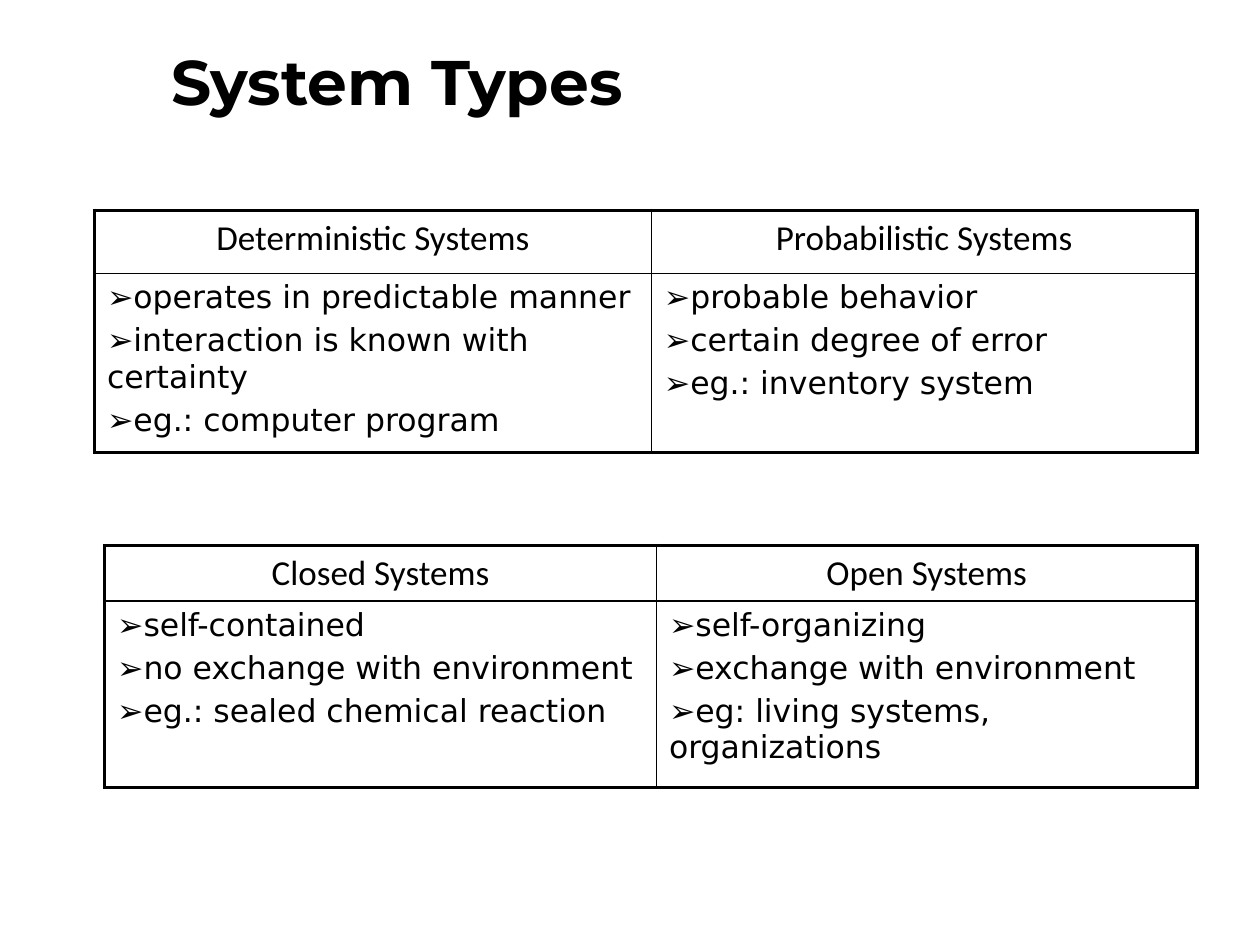
from lxml.etree import SubElement
from pptx import Presentation
from pptx.dml.color import RGBColor
from pptx.enum.text import MSO_ANCHOR, MSO_AUTO_SIZE, PP_ALIGN
from pptx.oxml import parse_xml
from pptx.oxml.ns import nsdecls, qn
from pptx.util import Inches, Pt

COLORS = {"text": "000000", "border": "000000"}
BODY_FONT = "DejaVu Sans"
OUTER, INNER = 2.25, 1
SYSTEMS = [
    {
        "pos": (0.75, 1.67), "cols": (4.42, 4.33), "rows": (0.5, 1.42),
        "content": {
            "Deterministic Systems": [
                "operates in predictable manner",
                "interaction is known with certainty",
                "eg.: computer program",
            ],
            "Probabilistic Systems": [
                "probable behavior",
                "certain degree of error",
                "eg.: inventory system",
            ],
        },
    },
    {
        "pos": (0.83, 4.33), "cols": (4.38, 4.29), "rows": (0.43, 1.48),
        "content": {
            "Closed Systems": [
                "self-contained",
                "no exchange with environment",
                "eg.: sealed chemical reaction",
            ],
            "Open Systems": [
                "self-organizing",
                "exchange with environment",
                "eg: living systems, organizations",
            ],
        },
    },
]


def format_paragraph(p, font, size, bold=False):
    for r in p.runs:
        r.font.name = font
        r.font.size = Pt(size)
        r.font.bold = bold
        r.font.color.rgb = RGBColor.from_string(COLORS["text"])


def add_title(s, text):
    sp = s.shapes.title
    sp.left, sp.top = Inches(0.84), Inches(0.29)
    sp.width, sp.height = Inches(4.62), Inches(0.71)
    tf = sp.text_frame
    tf.text = text
    tf.word_wrap = False
    tf.auto_size = MSO_AUTO_SIZE.NONE
    tf.vertical_anchor = MSO_ANCHOR.TOP
    p = tf.paragraphs[0]
    p.alignment = PP_ALIGN.CENTER
    format_paragraph(p, "Montserrat", 36, bold=True)


def set_borders(cell, row, col):
    widths = {
        "L": INNER if col else OUTER,
        "R": OUTER if col else INNER,
        "T": INNER if row else OUTER,
        "B": OUTER if row else INNER,
    }
    tc_pr = cell._tc.get_or_add_tcPr()
    for i, (side, width) in enumerate(widths.items()):
        tc_pr.insert(i, parse_xml(
            f'<a:ln{side} {nsdecls("a")} w="{Pt(width)}"><a:solidFill>'
            f'<a:srgbClr val="{COLORS["border"]}"/></a:solidFill></a:ln{side}>'
        ))


def add_bullet(p):
    p_pr = p._p.get_or_add_pPr()
    p_pr.set("marL", "0")
    p_pr.set("indent", "0")
    SubElement(p_pr, qn("a:buFont"), typeface=BODY_FONT)
    SubElement(p_pr, qn("a:buChar"), char="➢")


def fill_header(cell, text):
    cell.text = text
    p = cell.text_frame.paragraphs[0]
    p.alignment = PP_ALIGN.CENTER
    format_paragraph(p, "Calibri", 20)


def fill_bullets(cell, items):
    cell.text = "\n".join(items)
    for i, p in enumerate(cell.text_frame.paragraphs):
        add_bullet(p)
        if i:
            p.space_before = Pt(3.6)
        format_paragraph(p, BODY_FONT, 18)


def add_comparison(s, pos, cols, rows, content):
    table = s.shapes.add_table(
        len(rows), len(cols), Inches(pos[0]), Inches(pos[1]),
        Inches(sum(cols)), Inches(sum(rows)),
    ).table
    table.first_row = table.horz_banding = False
    for row, height in zip(table.rows, rows):
        row.height = Inches(height)
    for c, (header, items) in enumerate(content.items()):
        table.columns[c].width = Inches(cols[c])
        fill_header(table.cell(0, c), header)
        fill_bullets(table.cell(1, c), items)
        for r in range(len(rows)):
            cell = table.cell(r, c)
            cell.fill.background()
            set_borders(cell, r, c)


def main():
    prs = Presentation()
    prs.slide_width, prs.slide_height = Inches(10), Inches(7.5)
    s = prs.slides.add_slide(prs.slide_layouts[5])
    add_title(s, "System Types")
    for system in SYSTEMS:
        add_comparison(s, **system)
    prs.save("out.pptx")


if __name__ == "__main__":
    main()
